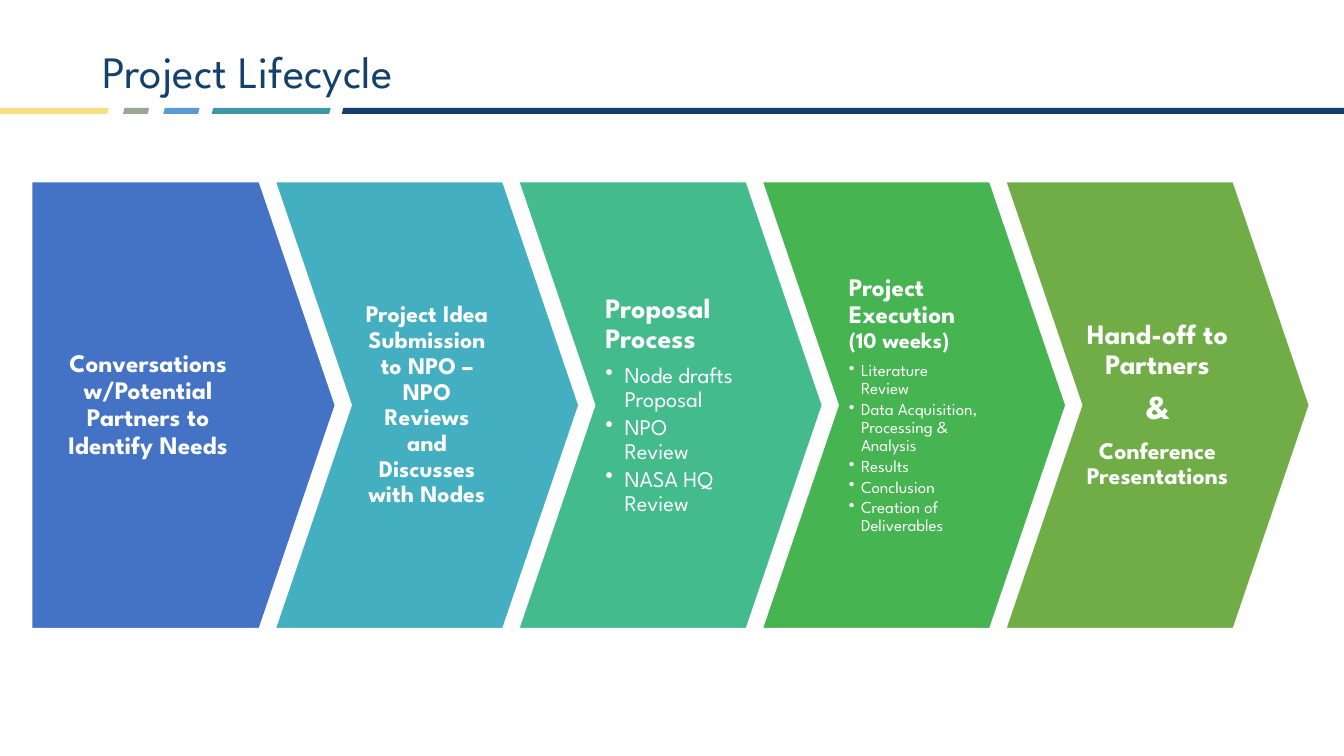
from dataclasses import dataclass

from lxml import etree
from pptx import Presentation
from pptx.dml.color import RGBColor
from pptx.enum.shapes import MSO_SHAPE
from pptx.enum.text import MSO_ANCHOR, PP_ALIGN
from pptx.oxml.ns import qn
from pptx.util import Inches, Pt

PARALLELOGRAM = MSO_SHAPE.PARALLELOGRAM
PENTAGON = MSO_SHAPE.PENTAGON
CHEVRON = MSO_SHAPE.CHEVRON
MIDDLE = MSO_ANCHOR.MIDDLE
LEFT = PP_ALIGN.LEFT
CENTER = PP_ALIGN.CENTER

NAVY = "13416C"
WHITE = "FFFFFF"

# left, width, colour
RULE_SEGMENTS = [
    (-0.04, 1.12, "FADF82"),
    (1.22, 0.26, "99A893"),
    (1.62, 0.36, "5B9BD5"),
    (2.1, 1.18, "3E96A8"),
    (3.39, 9.98, NAVY),
]
RULE_TOP, RULE_HEIGHT = 1.07, 0.06

STEP_LEFT, STEP_TOP = 0.31, 1.8
STEP_WIDTH, STEP_HEIGHT = 3.02, 4.44
STEP_PITCH = 2.415
STEP_POINT = 0.25


def color(value):
    return RGBColor.from_string(value)


@dataclass
class Step:
    """One arrow: headings are paragraphs made of (text, size) runs."""
    fill: str
    headings: list
    bullets: tuple = ()
    bullet_size: int = 0
    bullet_indent: float = 0
    side_insets: tuple = (0.11, 0.11)


STEPS = [
    Step("4472C4", [[("Conversations w/Potential Partners to Identify Needs", 18)]],
         side_insets=(0.11, 0.43)),
    Step("43AFC0", [[("Project Idea Submission to NPO – NPO Reviews and "
                      "Discusses with Nodes", 17)]]),
    Step("43BB8D", [[("Proposal Process", 20)]],
         ("Node drafts Proposal", "NPO Review", "NASA HQ Review"), 16, 0.19),
    Step("45B451", [[("Project Execution ", 18), ("(10 weeks)", 16)]],
         ("Literature Review", "Data Acquisition, Processing & Analysis",
          "Results", "Conclusion", "Creation of Deliverables"), 12, 0.12),
    Step("70AD47", [[("Hand-off to Partners", 20)], [("&", 24)],
                    [("Conference Presentations", 17)]],
         side_insets=(0, 0)),
]


class SlideBuilder:
    def __init__(self, slide, font_name):
        self.slide = slide
        self.font_name = font_name

    def shape(self, kind, left, top, width, height, fill, line=None):
        shape = self.slide.shapes.add_shape(
            kind, Inches(left), Inches(top), Inches(width), Inches(height))
        shape.shadow.inherit = False
        shape.fill.solid()
        shape.fill.fore_color.rgb = color(fill)
        if line:
            shape.line.color.rgb = color(line)
            shape.line.width = Pt(1.5)
        else:
            shape.line.fill.background()
        return shape

    def text_box(self, left, top, width, height, side_insets=(0.1, 0.1)):
        """Add an empty, wrapping, vertically centred box; return its frame."""
        box = self.slide.shapes.add_textbox(
            Inches(left), Inches(top), Inches(width), Inches(height))
        frame = box.text_frame
        frame.word_wrap = True
        frame.vertical_anchor = MIDDLE
        frame.margin_left, frame.margin_right = map(Inches, side_insets)
        frame.margin_top = frame.margin_bottom = Inches(0.05)
        return frame

    def paragraph(self, frame, runs, text_color, bold=False, align=LEFT,
                  space_ratio=0, bullet_indent=0):
        """Fill the first empty paragraph, or add one, with (text, size) runs."""
        first = frame.paragraphs[0]
        paragraph = frame.add_paragraph() if first.runs else first
        paragraph.alignment = align
        paragraph.line_spacing = 0.9
        paragraph.space_after = Pt(round(space_ratio * runs[0][1], 1))
        if bullet_indent:
            self.bullet(paragraph, bullet_indent)
        for text, size in runs:
            run = paragraph.add_run()
            run.text = text
            run.font.name = self.font_name
            run.font.size = Pt(size)
            run.font.bold = bold
            run.font.color.rgb = color(text_color)

    def bullet(self, paragraph, indent):
        paragraph.level = 1
        properties = paragraph._p.get_or_add_pPr()
        properties.set("marL", str(Inches(indent)))
        properties.set("indent", str(-Inches(indent)))
        etree.SubElement(properties, qn("a:buChar")).set("char", "•")

    def title(self, text):
        frame = self.text_box(0.92, 0.4, 11.5, 0.67)
        self.paragraph(frame, [(text, 32)], NAVY)

    def step(self, index, step):
        left = STEP_LEFT + index * STEP_PITCH
        kind = CHEVRON if index else PENTAGON
        arrow = self.shape(kind, left, STEP_TOP, STEP_WIDTH, STEP_HEIGHT,
                           step.fill, WHITE)
        arrow.adjustments[0] = STEP_POINT

        notch = STEP_WIDTH * STEP_POINT
        text_left, text_width = (
            (left + notch, STEP_WIDTH - 2 * notch) if index else (left, 2.64))
        frame = self.text_box(text_left, STEP_TOP, text_width, STEP_HEIGHT,
                              step.side_insets)
        align = LEFT if step.bullets else CENTER
        for runs in step.headings:
            self.paragraph(frame, runs, WHITE, bold=True, align=align,
                           space_ratio=0.35)
        for text in step.bullets:
            self.paragraph(frame, [(text, step.bullet_size)], WHITE,
                           space_ratio=0.15, bullet_indent=step.bullet_indent)


def main():
    presentation = Presentation()
    presentation.slide_width = Inches(13.33)
    presentation.slide_height = Inches(7.5)
    slide = presentation.slides.add_slide(presentation.slide_layouts[6])
    builder = SlideBuilder(slide, "League Spartan")

    for left, width, fill in RULE_SEGMENTS:
        builder.shape(PARALLELOGRAM, left, RULE_TOP, width, RULE_HEIGHT, fill)
    builder.title("Project Lifecycle")
    for index, step in enumerate(STEPS):
        builder.step(index, step)

    presentation.save("out.pptx")


if __name__ == "__main__":
    main()
